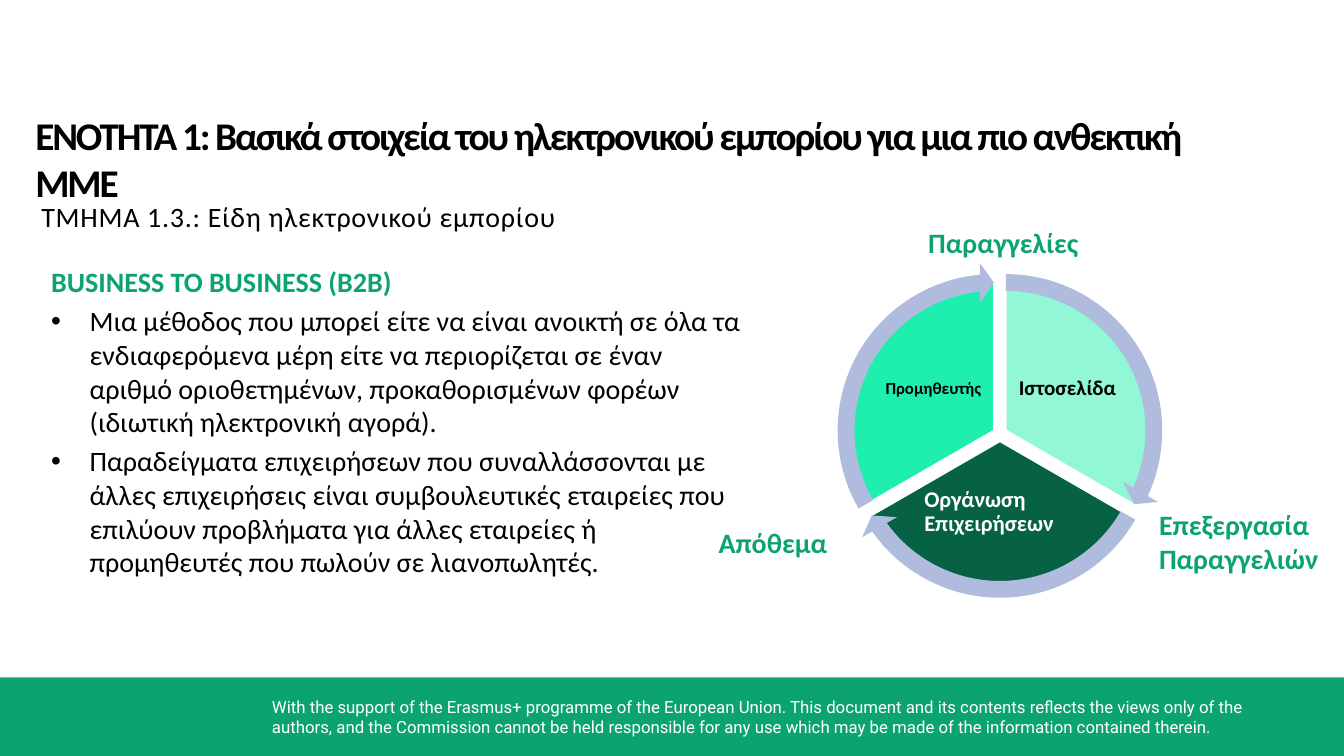
"""Build the B2B slide: a title, two bullets and a three-part order cycle."""
from lxml import etree
from pptx import Presentation
from pptx import util as u
from pptx.dml import color
from pptx.enum import shapes, text
from pptx.oxml import ns

GREEN, BLACK, WHITE, ARROW = "0CA373", "000000", "FFFFFF", "B0BCDE"
COLUMNS, ROWS = 80, 45

deck = Presentation()
deck.slide_width, deck.slide_height = u.Inches(13.33), u.Inches(7.5)
page = deck.slides.add_slide(deck.slide_layouts[5])
column, row = deck.slide_width / COLUMNS, deck.slide_height / ROWS


def paint(target, hex_color):
    """Give a fill or a font a solid colour."""
    if hasattr(target, "solid"):
        target.solid()
        target = target.fore_color
    else:
        target = target.color
    target.rgb = color.RGBColor.from_string(hex_color)


def write(box, lines, size, hex_color, bold=False, font="Calibri", spacing=0,
          inset=(0.1, 0.05), anchor=text.MSO_ANCHOR.TOP, **layout):
    """Fill a box with equally formatted paragraphs and return them."""
    frame = box.text_frame
    frame.text = "\n".join(lines)
    side, top = map(u.Inches, inset)
    frame_format = {
        "word_wrap": True, "auto_size": text.MSO_AUTO_SIZE.NONE,
        "vertical_anchor": anchor, "margin_left": side, "margin_right": side,
        "margin_top": top, "margin_bottom": top}
    for name, value in frame_format.items():
        setattr(frame, name, value)
    for para in frame.paragraphs:
        for name, value in {"alignment": text.PP_ALIGN.LEFT, **layout}.items():
            setattr(para, name, value)
        for span in para.runs:
            for name, value in {"name": font, "size": u.Pt(size), "bold": bold}.items():
                setattr(span.font, name, value)
            paint(span.font, hex_color)
            if spacing:
                span._r.get_or_add_rPr().set("spc", str(int(spacing * 100)))
    return frame.paragraphs


title = page.shapes.title
title.left, title.top = int(2.1 * column), int(6.54 * row)
title.width, title.height = int(70.74 * column), int(2.94 * row)
write(title, ["ΕΝΟΤΗΤΑ 1: Βασικά στοιχεία του ηλεκτρονικού εμπορίου για μια πιο ανθεκτική ΜΜΕ"],
      28, BLACK, bold=True, spacing=-1.5, inset=(0, 0.01))

footer_top = 40.32
band = page.shapes.add_shape(
    shapes.MSO_SHAPE.RECTANGLE, 0, int(footer_top * row),
    deck.slide_width, int((ROWS - footer_top) * row))
band.shadow.inherit = False
paint(band.fill, GREEN)
band.line.fill.background()

cycle = [
    (270, 59.88, 25.62, "91F7D7"),
    (30, 59.52, 26.28, "076145"),
    (150, 59.16, 25.62, "1EEEAE"),
]
sweep, head_angle, per_degree = 120, 5.46, 0.6
for kind, size in ((shapes.MSO_SHAPE.PIE, 17.76), (shapes.MSO_SHAPE.CIRCULAR_ARROW, 20)):
    for start, center_x, center_y, slice_color in cycle:
        part = page.shapes.add_shape(
            kind, int((center_x - size / 2) * column), int((center_y - size / 2) * row),
            int(size * column), int(size * row))
        part.shadow.inherit = False
        end = (start + sweep) % 360
        if kind == shapes.MSO_SHAPE.PIE:
            values = [start * per_degree, end * per_degree]
            paint(part.fill, slice_color)
            paint(part.line.fill, WHITE)
            part.line.width = u.Pt(1)
        else:
            values = [0.05, head_angle * per_degree, (end - head_angle) * per_degree,
                      start * per_degree, 0.06]
            paint(part.fill, ARROW)
            part.line.fill.background()
        for index, value in enumerate(values):
            part.adjustments[index] = value

middle = {"anchor": text.MSO_ANCHOR.MIDDLE, "alignment": text.PP_ALIGN.CENTER}
slice_label = {"bold": True, "inset": (0.02, 0.02), "line_spacing": 0.9}
step_label = {"size": 20, "hex_color": GREEN, "bold": True}
texts = [
    ((15.6, 41.16, 62.52, 3),
     "With the support of the Erasmus+ programme of the European Union. This document and "
     "its contents reflects the views only of the authors, and the Commission cannot be held "
     "responsible for any use which may be made of the information contained therein.",
     {"size": 12, "hex_color": WHITE, "font": "Roboto"}),
    ((2.46, 11.76, 39.66, 4.2), "ΤΜΗΜΑ 1.3.: Είδη ηλεκτρονικού εμπορίου",
     {"size": 20, "hex_color": BLACK, "spacing": 0.5, "inset": (0, 0.02)}),
    ((60.36, 20.52, 6.36, 5.28), "Ιστοσελίδα",
     {"size": 15, "hex_color": BLACK, **slice_label, **middle}),
    ((54.9, 28.92, 9.54, 4.68), "Οργάνωση Επιχειρήσεων",
     {"size": 16, "hex_color": WHITE, **slice_label}),
    ((52.38, 20.52, 6.36, 5.28), "Προμηθευτής",
     {"size": 12, "hex_color": BLACK, **slice_label, **middle}),
    ((42.18, 30.96, 8.88, 2.64), "Απόθεμα", step_label),
    ((68.4, 29.94, 10.86, 6.66), "Επεξεργασία Παραγγελιών", step_label),
    ((54.66, 13.14, 11.58, 2.64), "Παραγγελίες", step_label),
]
for (left, top, width, height), words, style in texts:
    box = page.shapes.add_textbox(
        int(left * column), int(top * row), int(width * column), int(height * row))
    write(box, [words], **style)

body = page.shapes.add_textbox(
    int(2.46 * column), int(14.46 * row), int(42.42 * column), int(20.58 * row))
heading, *bullets = write(body, [
    "BUSINESS TO BUSINESS (B2B)",
    "Μια μέθοδος που μπορεί είτε να είναι ανοικτή σε όλα τα ενδιαφερόμενα μέρη είτε να "
    "περιορίζεται σε έναν αριθμό οριοθετημένων, προκαθορισμένων φορέων "
    "(ιδιωτική ηλεκτρονική αγορά).",
    "Παραδείγματα επιχειρήσεων που συναλλάσσονται με άλλες επιχειρήσεις είναι "
    "συμβουλευτικές εταιρείες που επιλύουν προβλήματα για άλλες εταιρείες ή προμηθευτές "
    "που πωλούν σε λιανοπωλητές.",
], 20, BLACK)
heading.line_spacing = 1.5
heading.runs[0].font.bold = True
paint(heading.runs[0].font, GREEN)
for para in bullets:
    para.space_before = u.Pt(4)
    properties = para._p.get_or_add_pPr()
    indent = u.Inches(0.38)
    properties.set("marL", str(indent))
    properties.set("indent", str(-indent))
    etree.SubElement(properties, ns.qn("a:buFont")).set("typeface", "Arial")
    etree.SubElement(properties, ns.qn("a:buChar")).set("char", "•")

deck.save("out.pptx")
